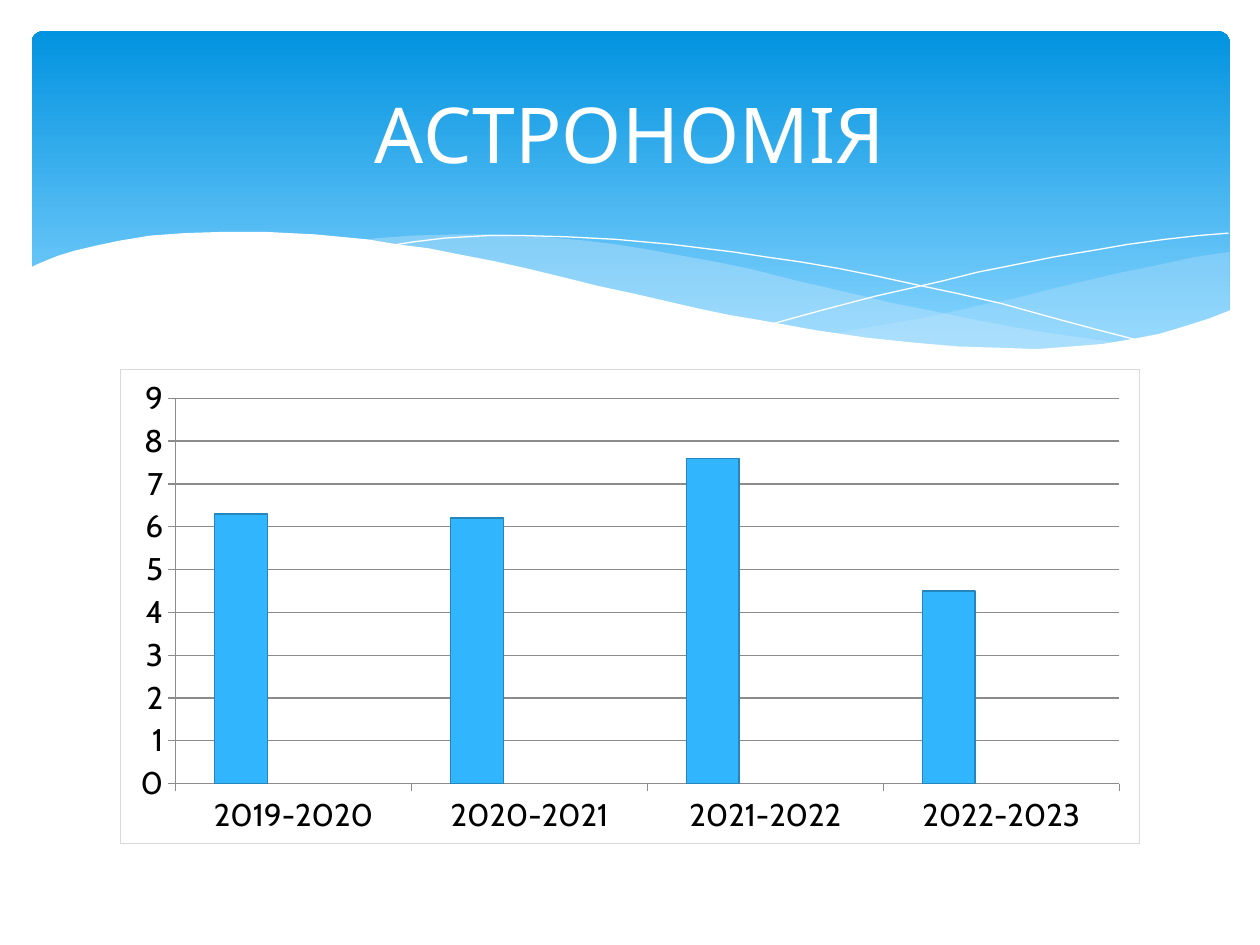
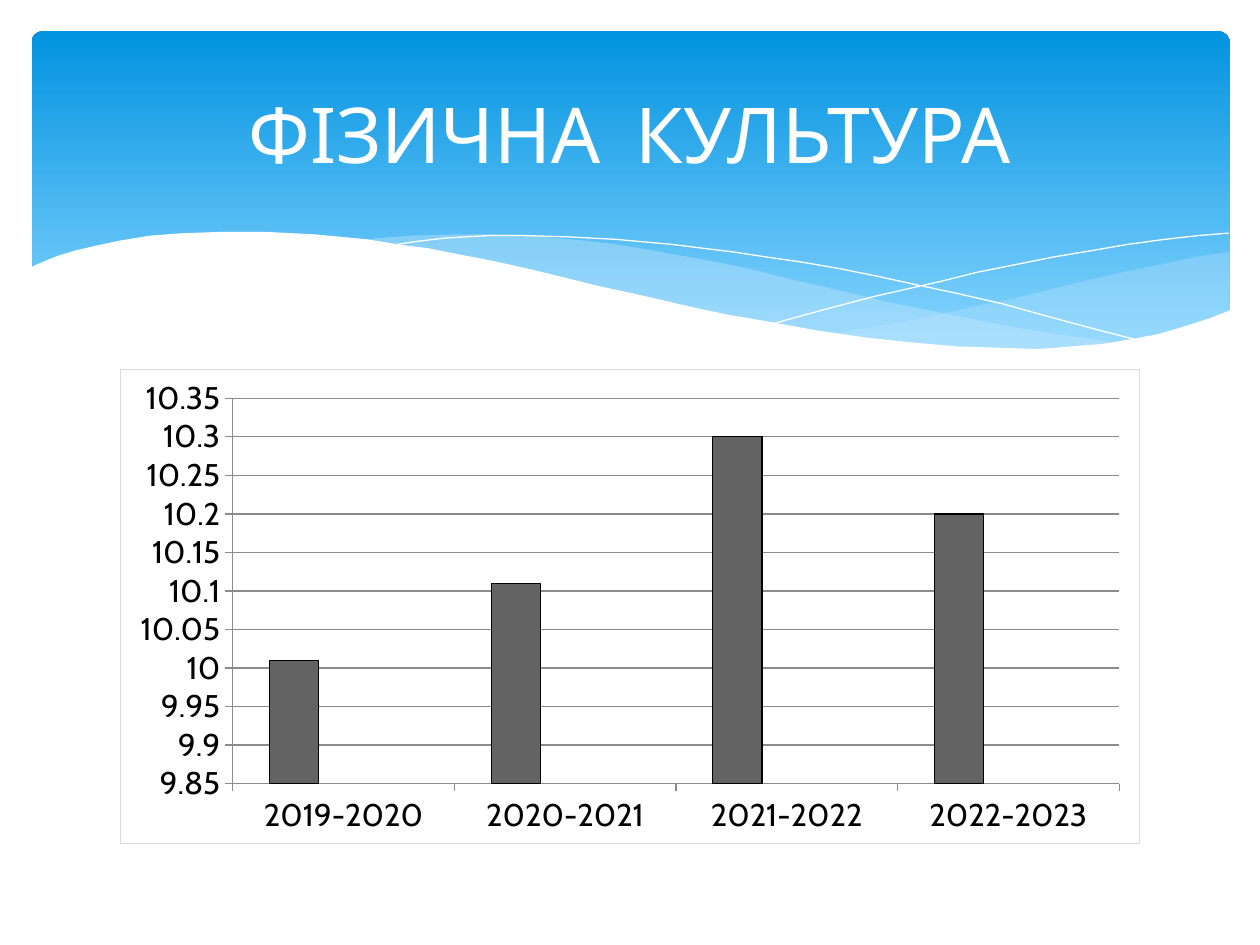
from dataclasses import dataclass

from lxml import etree
from pptx import Presentation
from pptx.chart.data import CategoryChartData
from pptx.dml.color import RGBColor
from pptx.enum.chart import XL_CHART_TYPE, XL_TICK_MARK
from pptx.enum.shapes import MSO_SHAPE
from pptx.enum.text import MSO_ANCHOR, PP_ALIGN
from pptx.oxml import parse_xml
from pptx.oxml.ns import nsdecls, qn
from pptx.util import Pt

PX = 9144  # EMU in one px, 100 px to the inch
TITLE_ONLY = 5


@dataclass(frozen=True)
class Theme:
    white: str = "FFFFFF"
    black: str = "000000"
    banner_low: str = "83D3FE"
    banner_high: str = "0293E0"
    ripple: str = "C6E7FC"
    axis: str = "8B8B8B"
    border: str = "D9D9D9"
    blues: tuple = (("31B6FD", "2486BB"), ("4584D3", "33619C"), ("5BD078", "439958"))
    greys: tuple = (("636363", "000000"), ("B4B4B4", "000000"), ("848484", "000000"))
    font: str = "Cabin"
    chart_font: str = "Arial"
    title_size: int = 44
    axis_size: int = 18
    chart_size: int = 10
    line_width: float = 0.75


RIGHT_RIPPLE = [
    (975, 200), (948, 204), (921, 210), (891, 216), (861, 223), (832, 230),
    (805, 237), (779, 242), (753, 248), (729, 253), (706, 257), (683, 261),
    (661, 265), (691, 269), (719, 272), (745, 275), (769, 277), (803, 278),
    (835, 277), (863, 275), (889, 272), (913, 267), (935, 261), (949, 257),
    (963, 252), (976, 247), (976, 200),
]
MIDDLE_RIPPLE = [
    (893, 273), (866, 269), (837, 265), (807, 260), (775, 254), (741, 247),
    (706, 240), (668, 231), (629, 222), (598, 214), (569, 208), (541, 203),
    (514, 198), (489, 194), (465, 191), (442, 189), (420, 187), (399, 186),
    (361, 186), (328, 187), (299, 189), (286, 191), (323, 196), (362, 203),
    (404, 211), (449, 222), (491, 232), (530, 240), (566, 248), (601, 255),
    (634, 261), (665, 266), (695, 270), (722, 274), (748, 276), (773, 277),
    (796, 278), (828, 278), (857, 277), (876, 275),
]
FALLING_LINE = [
    (309, 195), (328, 192), (353, 189), (387, 187), (416, 187), (450, 188),
    (489, 190), (533, 194), (582, 200), (608, 204), (636, 208), (665, 213),
    (695, 219), (727, 226), (760, 233), (795, 241), (831, 251), (868, 261),
    (907, 271),
]
RISING_LINE = [
    (613, 257), (653, 246), (695, 235), (748, 223), (776, 216), (806, 210),
    (836, 204), (866, 199), (895, 194), (924, 190), (951, 187), (975, 185),
]
WHITE_WAVE = [
    (977, 246), (959, 253), (940, 259), (920, 265), (899, 269), (875, 273),
    (850, 275), (823, 277), (793, 276), (761, 275), (726, 272), (688, 268),
    (647, 262), (603, 254), (579, 250), (555, 245), (529, 239), (503, 233),
    (475, 227), (447, 220), (418, 213), (391, 207), (365, 202), (340, 197),
    (316, 194), (292, 190), (271, 188), (250, 186), (230, 185), (211, 184),
    (177, 184), (146, 185), (119, 187), (95, 191), (76, 195), (59, 199),
    (46, 203), (36, 207), (29, 210), (23, 213), (23, 329), (977, 329),
]


def rgb(code):
    return RGBColor.from_string(code)


def px(*lengths):
    return [n * PX for n in lengths]


class Deck:
    def __init__(self, theme):
        self.theme = theme
        self.prs = Presentation()
        self.prs.slide_width, self.prs.slide_height = px(1000, 750)
        self.layout = self.prs.slide_layouts[TITLE_ONLY]
        self.s = None

    def add_slide(self):
        self.s = self.prs.slides.add_slide(self.layout)

    def title(self, text):
        t, sp = self.theme, self.s.shapes.title
        sp.left, sp.top, sp.width, sp.height = px(50, 37, 900, 137)
        tf = sp.text_frame
        tf.text = text
        tf.vertical_anchor = MSO_ANCHOR.MIDDLE
        p = tf.paragraphs[0]
        p.alignment = PP_ALIGN.CENTER
        self.font(p.runs[0].font, t.font, t.title_size, t.white)

    def font(self, font, name, size, color):
        font.name, font.size = name, Pt(size)
        font.color.rgb = rgb(color)

    def line(self, line, color, width):
        line.color.rgb = rgb(color)
        line.width = Pt(width)

    def banner(self):
        sp = self.s.shapes.add_shape(MSO_SHAPE.ROUNDED_RECTANGLE, *px(25, 25, 951, 270))
        sp.adjustments[0] = 0.034
        sp.shadow.inherit = False
        sp.line.fill.background()
        sp.fill.gradient()
        sp.fill.gradient_angle = 90
        low, high = sp.fill.gradient_stops
        low.position, low.color.rgb = 0.1, rgb(self.theme.banner_low)
        high.position, high.color.rgb = 1, rgb(self.theme.banner_high)

    def outline(self, points, close):
        builder = self.s.shapes.build_freeform(*points[0], scale=PX)
        builder.add_line_segments(points[1:], close=close)
        sp = builder.convert_to_shape()
        sp.shadow.inherit = False
        return sp

    def area(self, points, color, opacity=100):
        sp = self.outline(points, close=True)
        sp.line.fill.background()
        sp.fill.solid()
        sp.fill.fore_color.rgb = rgb(color)
        if opacity < 100:
            clr = sp.element.spPr.find(".//" + qn("a:srgbClr"))
            etree.SubElement(clr, qn("a:alpha")).set("val", str(opacity * 1000))

    def curve(self, points):
        sp = self.outline(points, close=False)
        sp.fill.background()
        self.line(sp.line, self.theme.white, 0)

    def wave_header(self):
        """Draw the header once on the current slide and move it to the layout."""
        t = self.theme
        self.banner()
        self.area(RIGHT_RIPPLE, t.ripple, 29)
        self.area(MIDDLE_RIPPLE, t.ripple, 40)
        self.curve(FALLING_LINE)
        self.curve(RISING_LINE)
        self.area(WHITE_WAVE, t.white)
        drawn = [sp for sp in self.s.shapes if not sp.is_placeholder]
        for number, sp in enumerate(drawn, start=101):
            sp.element.find(".//" + qn("p:cNvPr")).set("id", str(number))
            self.layout.shapes.element.append(sp.element)

    def column_chart(self, years, values, palette, scale):
        """Plot values in the first of three series; scale is (low, high, step)."""
        t = self.theme
        data = CategoryChartData()
        data.categories = years
        columns = [values] + [[None] * len(years)] * 2
        for number, column in enumerate(columns, start=1):
            data.add_series(f"Series {number}", column)
        chart = self.s.shapes.add_chart(
            XL_CHART_TYPE.COLUMN_CLUSTERED, *px(95, 293, 810, 377), data).chart
        chart.has_legend = chart.has_title = False
        self.chart_border(chart)
        self.font(chart.font, t.chart_font, t.chart_size, t.black)
        plot = chart.plots[0]
        plot.gap_width, plot.overlap, plot.vary_by_categories = 150, 0, False
        for series, (fill, edge) in zip(plot.series, palette):
            series.format.fill.solid()
            series.format.fill.fore_color.rgb = rgb(fill)
            self.line(series.format.line, edge, t.line_width)
        for axis in (chart.category_axis, chart.value_axis):
            axis.major_tick_mark = XL_TICK_MARK.OUTSIDE
            axis.minor_tick_mark = XL_TICK_MARK.NONE
            self.line(axis.format.line, t.axis, t.line_width)
            self.font(axis.tick_labels.font, t.font, t.axis_size, t.black)
        axis = chart.value_axis
        axis.minimum_scale, axis.maximum_scale, axis.major_unit = scale
        axis.tick_labels.number_format = "General"
        axis.tick_labels.number_format_is_linked = False
        axis.has_major_gridlines = True
        self.line(axis.major_gridlines.format.line, t.axis, t.line_width)

    def chart_border(self, chart):
        t = self.theme
        frame = parse_xml(
            f'<c:spPr {nsdecls("c", "a")}><a:noFill/><a:ln w="{Pt(t.line_width)}">'
            f'<a:solidFill><a:srgbClr val="{t.border}"/></a:solidFill></a:ln></c:spPr>')
        chart.element.find(qn("c:chart")).addnext(frame)


def main():
    theme = Theme()
    deck = Deck(theme)
    years = [f"{year}-{year + 1}" for year in range(2019, 2023)]
    subjects = [
        ("АСТРОНОМІЯ", [6.3, 6.2, 7.6, 4.5], theme.blues, (0, 9, 1)),
        ("ФІЗИЧНА  КУЛЬТУРА", [10.01, 10.11, 10.3, 10.2], theme.greys, (9.85, 10.35, 0.05)),
    ]
    for number, (subject, grades, palette, scale) in enumerate(subjects):
        deck.add_slide()
        if number == 0:
            deck.wave_header()
        deck.title(subject)
        deck.column_chart(years, grades, palette, scale)
    deck.prs.save("out.pptx")


if __name__ == "__main__":
    main()
